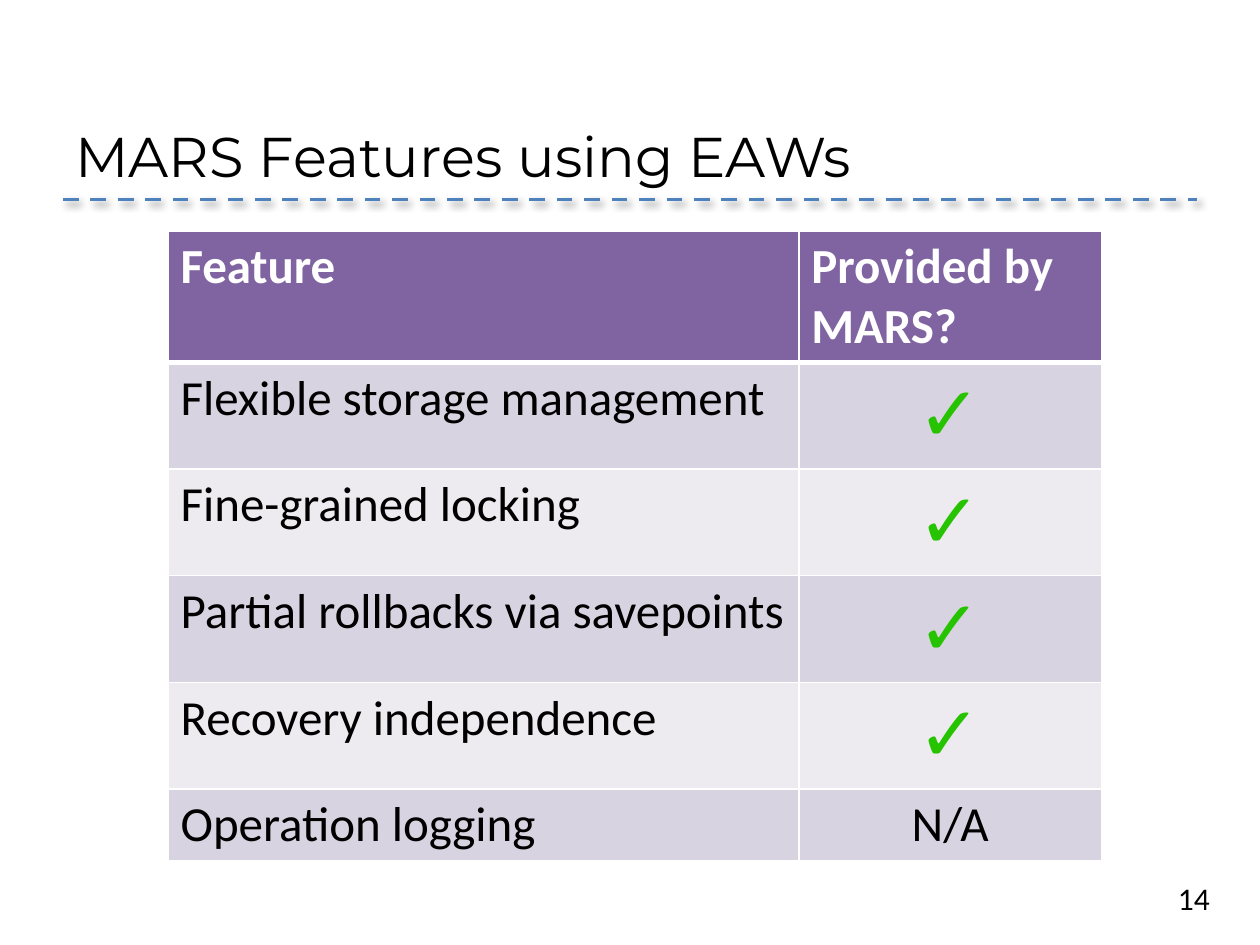
from lxml import etree
from pptx import Presentation
from pptx.dml.color import RGBColor
from pptx.enum.dml import MSO_LINE
from pptx.enum.shapes import MSO_CONNECTOR
from pptx.enum.text import MSO_ANCHOR, MSO_AUTO_SIZE, PP_ALIGN
from pptx.oxml.ns import qn
from pptx.util import Pt

BLACK = RGBColor(0x00, 0x00, 0x00)
WHITE = RGBColor(0xFF, 0xFF, 0xFF)
BLUE = RGBColor(0x4F, 0x81, 0xBD)
PURPLE = RGBColor(0x80, 0x64, 0xA2)
GREEN = RGBColor(0x26, 0xC3, 0x01)
BANDS = (RGBColor(0xD8, 0xD3, 0xE0), RGBColor(0xED, 0xEA, 0xF0))

DASH = MSO_LINE.DASH
STRAIGHT = MSO_CONNECTOR.STRAIGHT
BOTTOM, TOP = MSO_ANCHOR.BOTTOM, MSO_ANCHOR.TOP
LEFT, CENTER = PP_ALIGN.LEFT, PP_ALIGN.CENTER
FIT_SHAPE, NO_FIT = MSO_AUTO_SIZE.SHAPE_TO_FIT_TEXT, MSO_AUTO_SIZE.NONE

CHECK = "✓"
HEADER = ("Feature", "Provided by MARS?")
FEATURES = (
    ("Flexible storage management", CHECK),
    ("Fine-grained locking", CHECK),
    ("Partial rollbacks via savepoints", CHECK),
    ("Recovery independence", CHECK),
    ("Operation logging", "N/A"),
)
COLUMN_WIDTHS = (360.5, 173)
HEADER_HEIGHT, CHECK_HEIGHT, TEXT_HEIGHT = 75, 61, 41


def write_text(text_frame, text, size=28, font="Calibri", color=BLACK,
               bold=False, align=LEFT):
    paragraph = text_frame.paragraphs[0]
    paragraph.alignment = align
    run = paragraph.add_run()
    run.text = text
    run.font.name = font
    run.font.size = Pt(size)
    run.font.bold = bold
    run.font.color.rgb = color


def add_text(slide, text, left, top, width, height, anchor=TOP, wrap=True,
             fit=NO_FIT, **text_format):
    shape = slide.shapes.add_textbox(Pt(left), Pt(top), Pt(width), Pt(height))
    text_frame = shape.text_frame
    text_frame.word_wrap = wrap
    text_frame.auto_size = fit
    text_frame.vertical_anchor = anchor
    write_text(text_frame, text, **text_format)


def add_dashed_rule(slide, left, right, y):
    rule = slide.shapes.add_connector(STRAIGHT, Pt(left), Pt(y), Pt(right), Pt(y))
    rule.line.color.rgb = BLUE
    rule.line.width = Pt(2.25)
    rule.line.dash_style = DASH
    # Soft shadow below and to the right
    effects = etree.SubElement(rule._element.spPr, qn("a:effectLst"))
    shadow = etree.SubElement(
        effects, qn("a:outerShdw"), blurRad=str(Pt(4)), dist=str(Pt(3)),
        dir=str(45 * 60000), algn="tl", rotWithShape="0")
    color = etree.SubElement(shadow, qn("a:srgbClr"), val=str(BLACK))
    etree.SubElement(color, qn("a:alpha"), val="40000")


def set_borders(cell, top=1, bottom=1):
    properties = cell._tc.get_or_add_tcPr()
    sides = (("L", 1), ("R", 1), ("T", top), ("B", bottom))
    for position, (side, width) in enumerate(sides):
        line = etree.Element(qn(f"a:ln{side}"), w=str(Pt(width)))
        fill = etree.SubElement(line, qn("a:solidFill"))
        etree.SubElement(fill, qn("a:srgbClr"), val=str(WHITE))
        properties.insert(position, line)


def fill_cell(cell, text, fill, top=1, bottom=1, **text_format):
    cell.fill.solid()
    cell.fill.fore_color.rgb = fill
    set_borders(cell, top, bottom)
    write_text(cell.text_frame, text, **text_format)


def add_feature_table(slide, left, top):
    heights = [HEADER_HEIGHT] + [
        CHECK_HEIGHT if answer == CHECK else TEXT_HEIGHT
        for _, answer in FEATURES]
    table = slide.shapes.add_table(
        len(heights), len(COLUMN_WIDTHS), Pt(left), Pt(top),
        Pt(sum(COLUMN_WIDTHS)), Pt(sum(heights))).table
    for column, width in zip(table.columns, COLUMN_WIDTHS):
        column.width = Pt(width)
    for row, height in zip(table.rows, heights):
        row.height = Pt(height)

    # Header row
    for column, text in enumerate(HEADER):
        fill_cell(table.cell(0, column), text, PURPLE, bottom=3,
                  color=WHITE, bold=True)

    # Banded feature rows
    for row, (feature, answer) in enumerate(FEATURES, start=1):
        fill = BANDS[(row - 1) % 2]
        top_border = 3 if row == 1 else 1
        answer_format = (dict(size=44, color=GREEN, bold=True)
                         if answer == CHECK else {})
        fill_cell(table.cell(row, 0), feature, fill, top=top_border)
        fill_cell(table.cell(row, 1), answer, fill, top=top_border,
                  align=CENTER, **answer_format)


def main():
    presentation = Presentation()
    presentation.slide_width, presentation.slide_height = Pt(720), Pt(540)
    slide = presentation.slides.add_slide(presentation.slide_layouts[6])

    # Page number and rule
    add_text(slide, "14", 666, 498.5, 36, 29, wrap=False, fit=FIT_SHAPE, size=18)
    add_dashed_rule(slide, 36, 684, 114)

    # Title
    add_text(slide, "MARS Features using EAWs", 36, 21.6, 648, 90,
             anchor=BOTTOM, size=32, font="Montserrat")

    add_feature_table(slide, 96, 132)
    presentation.save("out.pptx")


if __name__ == "__main__":
    main()
